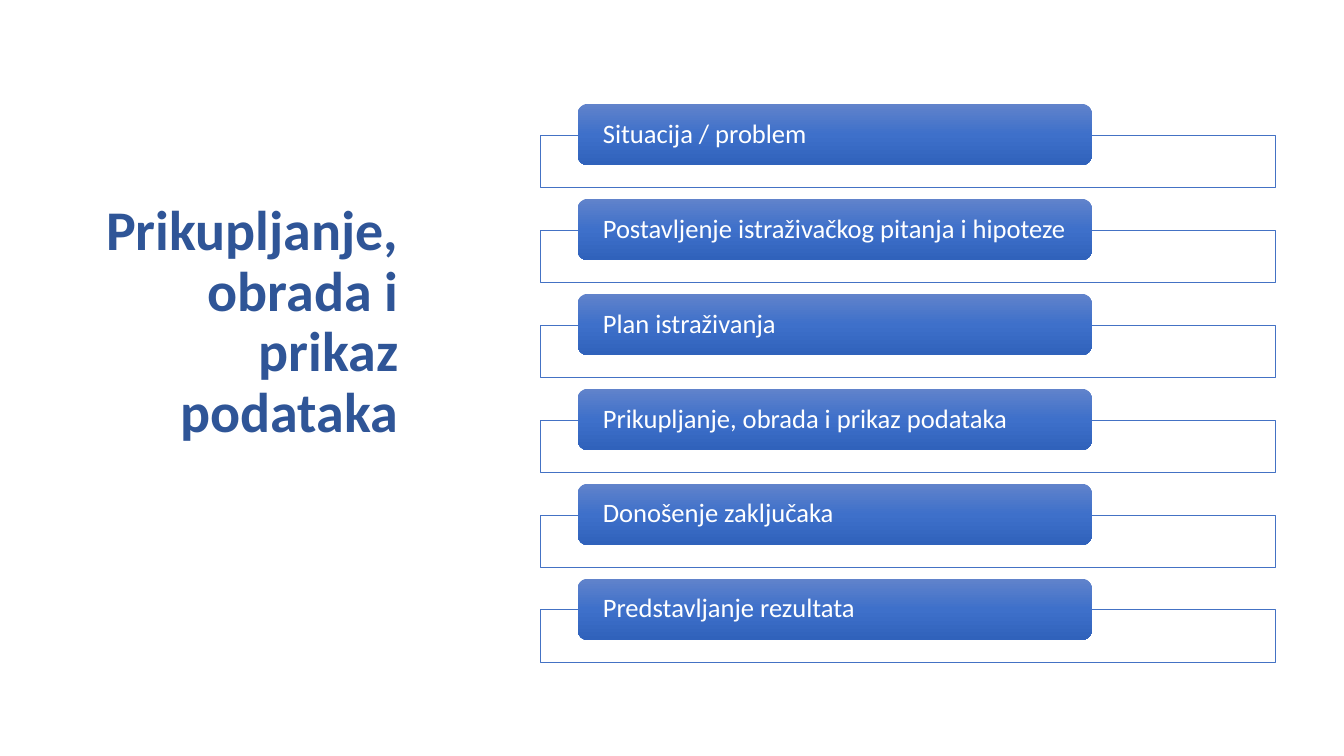
"""Build a slide with a title and six research steps in framed bars."""
from copy import deepcopy

from pptx import Presentation
from pptx.dml.color import RGBColor
from pptx.enum.shapes import MSO_SHAPE
from pptx.enum.text import MSO_ANCHOR, MSO_AUTO_SIZE, PP_ALIGN
from pptx.oxml.ns import qn
from pptx.util import Inches, Pt

RECTANGLE, ROUNDED = MSO_SHAPE.RECTANGLE, MSO_SHAPE.ROUNDED_RECTANGLE
MIDDLE, BOTTOM = MSO_ANCHOR.MIDDLE, MSO_ANCHOR.BOTTOM
LEFT, RIGHT = PP_ALIGN.LEFT, PP_ALIGN.RIGHT
NO_AUTOFIT = MSO_AUTO_SIZE.NONE
WHITE = RGBColor(0xFF, 0xFF, 0xFF)
TITLE_BLUE = RGBColor(0x2F, 0x55, 0x97)
FRAME_BLUE = RGBColor(0x44, 0x72, 0xC4)
BAR_STOPS = [
    (0, RGBColor(0x61, 0x83, 0xCB)),
    (0.5, RGBColor(0x3E, 0x70, 0xCA)),
    (1, RGBColor(0x30, 0x62, 0xBB)),
]
STEPS = [
    "Situacija / problem",
    "Postavljenje istraživačkog pitanja i hipoteze",
    "Plan istraživanja",
    "Prikupljanje, obrada i prikaz podataka",
    "Donošenje zaključaka",
    "Predstavljanje rezultata",
]
FIRST_TOP = 1.03
STEP_PITCH = 4.71 / 5


def write_text(shape, text, frame_format, para_format, font_format):
    frame = shape.text_frame
    frame.text = text
    para = frame.paragraphs[0]
    font = para.runs[0].font
    font.name = "Calibri"
    font.color.rgb = font_format["color"]
    font.size = font_format["size"]
    font.bold = font_format["bold"]
    for target, values in ((frame, frame_format), (para, para_format)):
        for name, value in values.items():
            setattr(target, name, value)


deck = Presentation()
deck.slide_width = Inches(13.33)
deck.slide_height = Inches(7.5)
page = deck.slides.add_slide(deck.slide_layouts[5])

title = page.shapes.title
title.left, title.top = Inches(0.64), Inches(1.84)
title.width, title.height = Inches(3.41), Inches(2.62)
write_text(
    title,
    "Prikupljanje, obrada i prikaz podataka",
    {"vertical_anchor": BOTTOM, "word_wrap": True, "auto_size": NO_AUTOFIT},
    {"alignment": RIGHT, "line_spacing": 0.9, "space_after": Pt(6)},
    {"color": TITLE_BLUE, "size": Pt(40), "bold": True},
)

for index, step in enumerate(STEPS):
    top = FIRST_TOP + index * STEP_PITCH

    frame_box = page.shapes.add_shape(
        RECTANGLE, Inches(5.36), Inches(top + 0.31), Inches(7.29), Inches(0.52))
    frame_box.shadow.inherit = False
    frame_box.fill.solid()
    frame_box.fill.fore_color.rgb = WHITE
    frame_box.line.color.rgb = FRAME_BLUE
    frame_box.line.width = Pt(0.5)

    bar = page.shapes.add_shape(
        ROUNDED, Inches(5.73), Inches(top), Inches(5.1), Inches(0.61))
    bar.shadow.inherit = False
    bar.line.fill.background()
    bar.fill.gradient()
    bar.fill.gradient_angle = 270
    stop_list = bar.element.spPr.find(qn("a:gradFill")).find(qn("a:gsLst"))
    stop_list.append(deepcopy(stop_list[0]))
    for stop, (position, color) in zip(bar.fill.gradient_stops, BAR_STOPS):
        stop.position = position
        stop.color.rgb = color
    write_text(
        bar,
        step,
        {"vertical_anchor": MIDDLE, "word_wrap": True,
         "margin_left": Inches(0.22), "margin_right": Inches(0.22),
         "margin_top": 0, "margin_bottom": 0},
        {"alignment": LEFT, "line_spacing": 0.9},
        {"color": WHITE, "size": Pt(19), "bold": False},
    )

deck.save("out.pptx")
